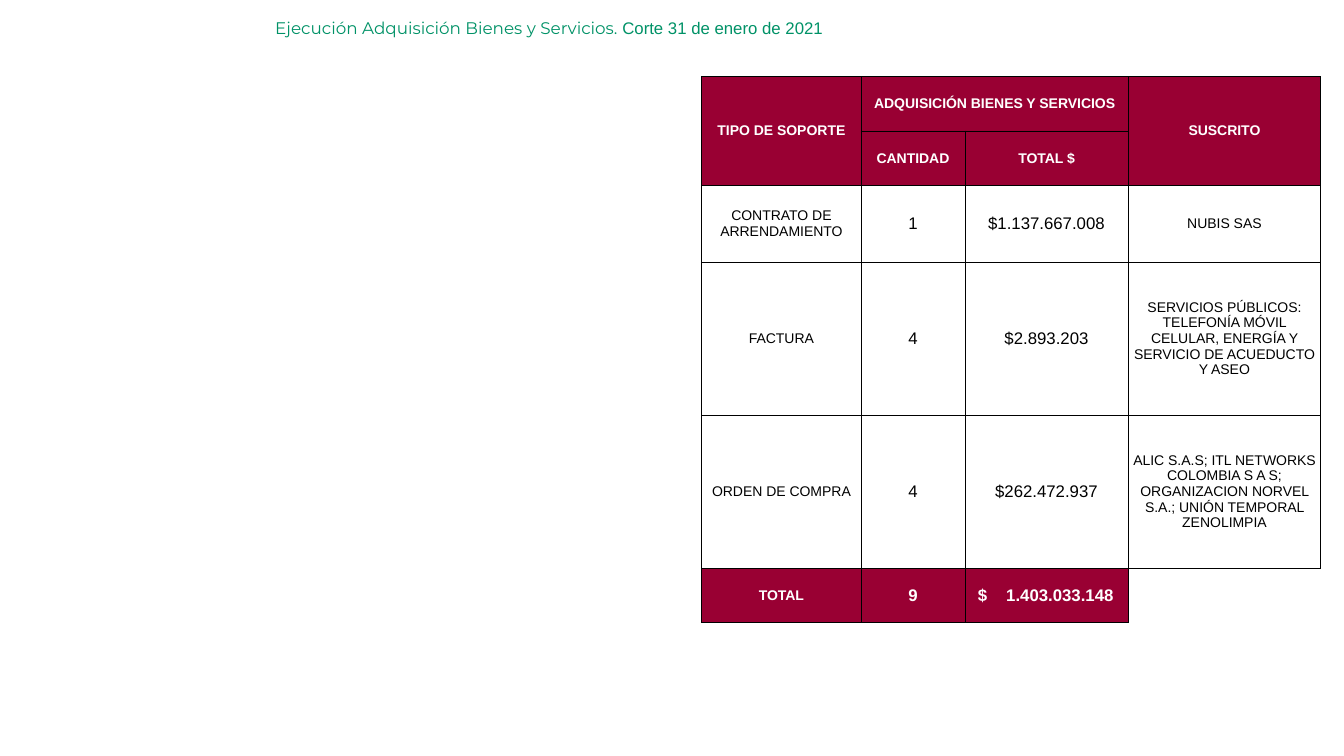
from dataclasses import dataclass

from lxml.etree import SubElement
from pptx import Presentation
from pptx.dml.color import RGBColor
from pptx.enum.text import MSO_ANCHOR, MSO_AUTO_SIZE, PP_ALIGN
from pptx.oxml.ns import qn
from pptx.util import Inches, Pt

COLORS = {
    "green": "009267",
    "maroon": "990033",
    "white": "FFFFFF",
    "black": "000000",
}
COLUMN_WIDTHS = [1.58, 1.03, 1.62, 1.91]
ROW_HEIGHTS = [0.54, 0.54, 0.76, 1.52, 1.52, 0.54]
LABEL_SIZE, FIGURE_SIZE = 10, 12
BORDER_WIDTH = 0.5


@dataclass
class Support:
    kind: str
    quantity: str
    total: str
    signed_by: str


SUPPORTS = [
    Support("CONTRATO DE ARRENDAMIENTO", "1", "$1.137.667.008", "NUBIS SAS"),
    Support("FACTURA", "4", "$2.893.203",
            "SERVICIOS PÚBLICOS: TELEFONÍA MÓVIL CELULAR, ENERGÍA Y "
            "SERVICIO DE ACUEDUCTO Y ASEO"),
    Support("ORDEN DE COMPRA", "4", "$262.472.937",
            "ALIC S.A.S; ITL NETWORKS COLOMBIA S A S; ORGANIZACION NORVEL "
            "S.A.; UNIÓN TEMPORAL ZENOLIMPIA"),
]
HEADINGS = [
    ["TIPO DE SOPORTE", "ADQUISICIÓN BIENES Y SERVICIOS", "", "SUSCRITO"],
    ["", "CANTIDAD", "TOTAL $", ""],
]
TOTALS = ["TOTAL", "9", "$\t1.403.033.148", ""]


def rgb(name: str) -> RGBColor:
    return RGBColor.from_string(COLORS[name])


def set_borders(cell, drawn: str) -> None:
    """Draw the sides named in drawn (letters of LRTB) and hide the others."""
    properties = cell._tc.get_or_add_tcPr()
    for position, side in enumerate("LRTB"):
        line = SubElement(properties, qn(f"a:ln{side}"), w=str(Pt(BORDER_WIDTH)))
        if side in drawn:
            fill = SubElement(line, qn("a:solidFill"))
            SubElement(fill, qn("a:srgbClr"), val=COLORS["black"])
        else:
            SubElement(line, qn("a:noFill"))
        properties.insert(position, line)


def add_tab_stop(paragraph, position: float) -> None:
    stops = SubElement(paragraph._p.get_or_add_pPr(), qn("a:tabLst"))
    SubElement(stops, qn("a:tab"), pos=str(Inches(position)), algn="l")


def fill_cell(cell, text: str, size: int, emphasized: bool) -> None:
    cell.margin_left = cell.margin_right = Inches(0)
    cell.margin_top = cell.margin_bottom = Inches(0)
    cell.vertical_anchor = MSO_ANCHOR.MIDDLE
    cell.fill.solid()
    cell.fill.fore_color.rgb = rgb("maroon" if emphasized else "white")
    paragraph = cell.text_frame.paragraphs[0]
    paragraph.text = text
    paragraph.alignment = PP_ALIGN.CENTER
    if "\t" in text:  # currency sign and amount set apart
        cell.margin_left = Inches(0.13)
        paragraph.alignment = PP_ALIGN.LEFT
        add_tab_stop(paragraph, 0.28)
    font = paragraph.font
    font.name, font.size, font.bold = "Arial", Pt(size), emphasized
    font.color.rgb = rgb("white" if emphasized else "black")


def add_title(slide) -> None:
    title = slide.shapes.title
    title.left, title.top = Inches(2.63), Inches(0.13)
    title.width, title.height = Inches(10.7), Inches(0.3)
    frame = title.text_frame
    frame.word_wrap = True
    frame.auto_size = MSO_AUTO_SIZE.SHAPE_TO_FIT_TEXT
    frame.vertical_anchor = MSO_ANCHOR.TOP
    paragraph = frame.paragraphs[0]
    paragraph.alignment = PP_ALIGN.LEFT
    paragraph.font.size = Pt(12)
    paragraph.font.color.rgb = rgb("green")
    for text, typeface in [
        ("Ejecución Adquisición Bienes y Servicios. ", "Montserrat"),
        ("Corte 31 de enero de 2021", "Arial"),
    ]:
        run = paragraph.add_run()
        run.text = text
        run.font.name = typeface


def add_support_table(slide) -> None:
    body = [[s.kind, s.quantity, s.total, s.signed_by] for s in SUPPORTS]
    rows = HEADINGS + body + [TOTALS]
    table = slide.shapes.add_table(
        len(rows), len(COLUMN_WIDTHS), Inches(6.96), Inches(0.76),
        Inches(sum(COLUMN_WIDTHS)), Inches(sum(ROW_HEIGHTS))).table
    table.first_row = table.horz_banding = False
    for column, width in zip(table.columns, COLUMN_WIDTHS):
        column.width = Inches(width)
    for row, height in zip(table.rows, ROW_HEIGHTS):
        row.height = Inches(height)

    first_body, last = len(HEADINGS), len(rows) - 1
    for r, texts in enumerate(rows):
        emphasized = r < first_body or r == last
        for c, text in enumerate(texts):
            is_figure = r >= first_body and c in (1, 2)
            size = FIGURE_SIZE if is_figure else LABEL_SIZE
            fill_cell(table.cell(r, c), text, size, emphasized)
            set_borders(table.cell(r, c), "LRTB")

    # Headings that span rows or columns
    table.cell(0, 0).merge(table.cell(1, 0))
    table.cell(0, 1).merge(table.cell(0, 2))
    table.cell(0, 3).merge(table.cell(1, 3))

    # Open corner beside the totals
    corner = table.cell(last, 3)
    corner.fill.background()
    for line in list(corner._tc.tcPr)[:4]:
        corner._tc.tcPr.remove(line)
    set_borders(corner, "LT")


def main() -> None:
    deck = Presentation()
    deck.slide_width, deck.slide_height = Inches(13.33), Inches(7.5)
    slide = deck.slides.add_slide(deck.slide_layouts[5])
    add_title(slide)
    add_support_table(slide)
    deck.save("out.pptx")


if __name__ == "__main__":
    main()
